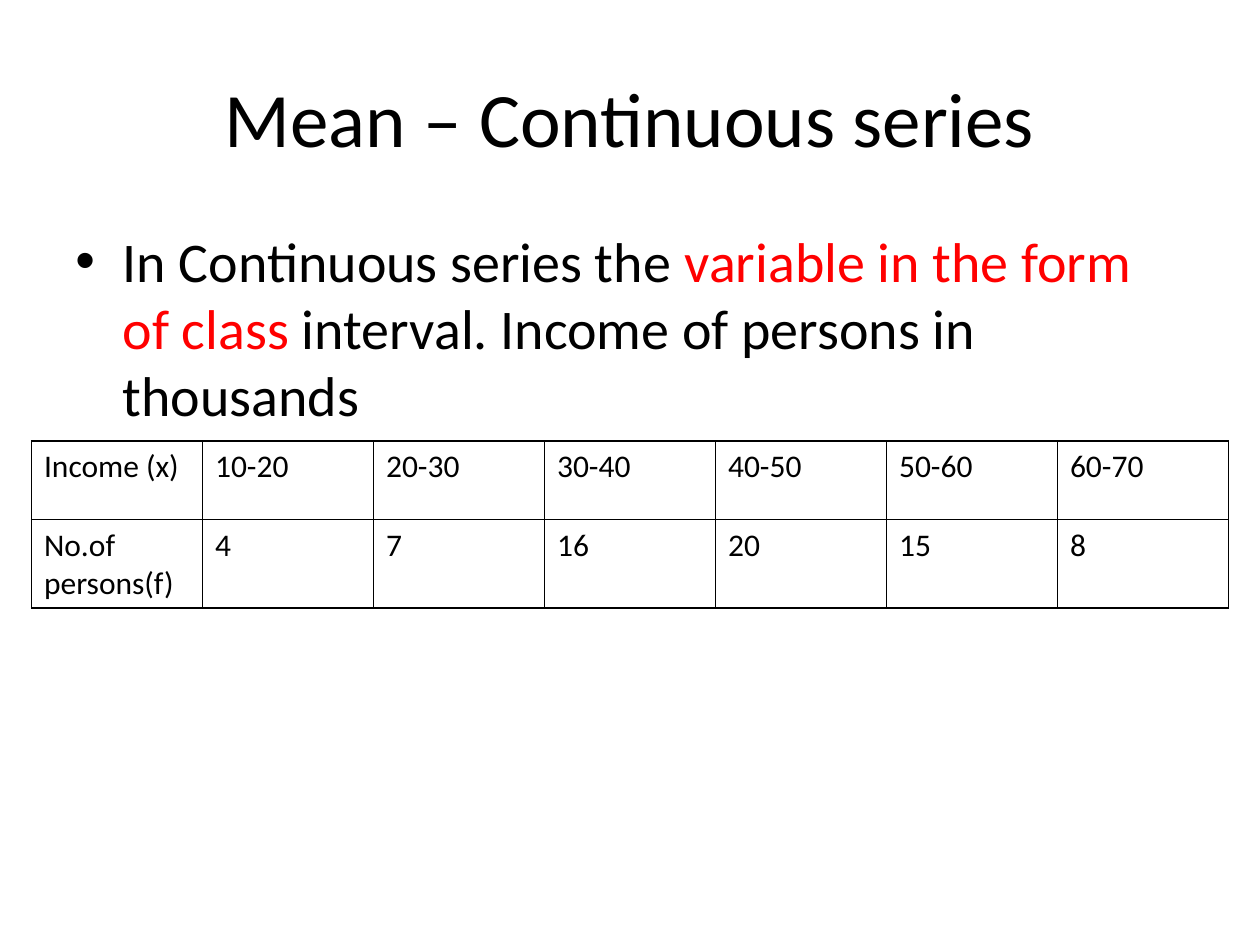
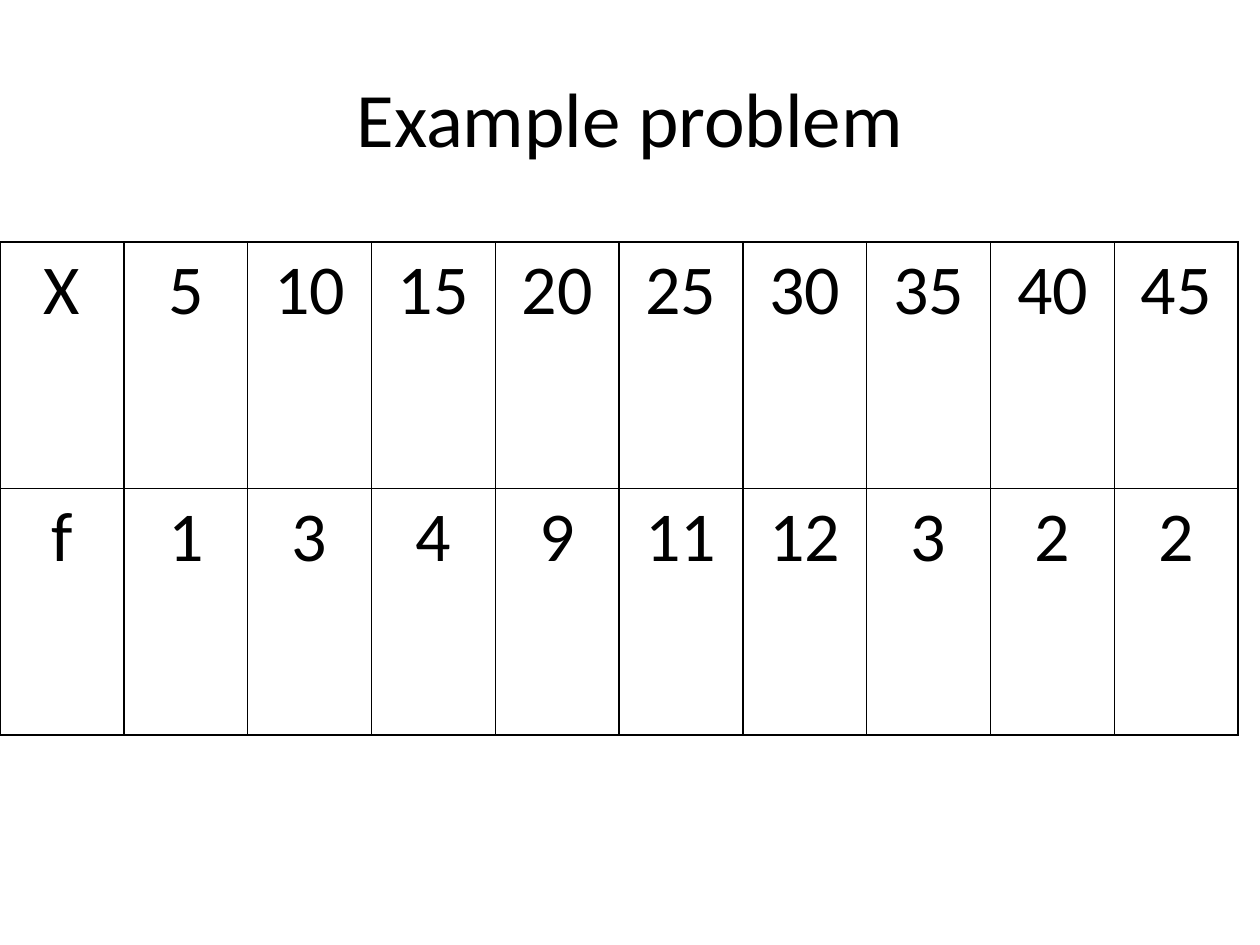
from lxml.etree import SubElement
from pptx import Presentation
from pptx.dml.color import RGBColor
from pptx.enum.text import MSO_ANCHOR as Anchor, PP_ALIGN as Align
from pptx.oxml.ns import qn
from pptx.util import Inches, Pt

WIDTH, HEIGHT = Inches(10), Inches(7.5)
MARGIN = 0.05
FONT, INK, ACCENT = "Calibri", "000000", "FF0000"
TITLE_SIZE, BODY_SIZE = 44, 32
BORDER_WIDTH = Pt(1)

INCOME = [
    ["Income (x)", "10-20", "20-30", "30-40", "40-50", "50-60", "60-70"],
    ["No.of persons(f)", "4", "7", "16", "20", "15", "8"],
]
FREQUENCY = [
    ["X", *(str(x) for x in range(5, 50, 5))],
    ["f", "1", "3", "4", "9", "11", "12", "3", "2", "2"],
]


def color(value):
    """Turn a hex string into a colour."""
    return RGBColor.from_string(value)


def across(share):
    """Return a share of the slide width."""
    return round(WIDTH * share)


def down(share):
    """Return a share of the slide height."""
    return round(HEIGHT * share)


def add_run(paragraph, text, size, ink=INK):
    """Add one run in the shared font."""
    run = paragraph.add_run()
    run.text = text
    run.font.name, run.font.size, run.font.bold = FONT, Pt(size), False
    run.font.color.rgb = color(ink)


def add_frame(slide, top, height, anchor):
    """Add a wrapping text frame between the side margins."""
    box = slide.shapes.add_textbox(across(MARGIN), down(top), across(1 - 2 * MARGIN), down(height))
    frame = box.text_frame
    frame.word_wrap = True
    frame.vertical_anchor = anchor
    return frame


def add_title(slide, text):
    """Add the centred slide title."""
    heading = add_frame(slide, 0.04, 1 / 6, Anchor.MIDDLE).paragraphs[0]
    heading.alignment = Align.CENTER
    add_run(heading, text, TITLE_SIZE)


def add_bullet(slide, pieces):
    """Add a bulleted paragraph made of (text, colour) pieces."""
    statement = add_frame(slide, 0.233, 0.66, Anchor.TOP).paragraphs[0]
    properties = statement._p.get_or_add_pPr()
    indent = Inches(0.375)
    properties.set("marL", str(indent))
    properties.set("indent", str(-indent))
    SubElement(properties, qn("a:buFont"), typeface="Arial")
    SubElement(properties, qn("a:buChar"), char="•")
    for text, ink in pieces:
        add_run(statement, text, BODY_SIZE, ink)


def add_borders(cell):
    """Draw a thin line on the four sides of a cell."""
    properties = cell._tc.get_or_add_tcPr()
    for side in ("lnL", "lnR", "lnT", "lnB"):
        line = SubElement(properties, qn(f"a:{side}"), w=str(BORDER_WIDTH))
        fill = SubElement(line, qn("a:solidFill"))
        SubElement(fill, qn("a:srgbClr"), val=INK)


def add_grid(slide, rows, left, top, width, row_height, size, align):
    """Add an unfilled, ruled table with equal columns and rows."""
    count = len(rows[0])
    grid = slide.shapes.add_table(
        len(rows), count, across(left), down(top),
        across(width), down(row_height * len(rows))).table
    grid.first_row = grid.horz_banding = False
    for column in grid.columns:
        column.width = across(width / count)
    for r, values in enumerate(rows):
        grid.rows[r].height = down(row_height)
        for c, value in enumerate(values):
            cell = grid.cell(r, c)
            add_borders(cell)
            cell.fill.background()
            entry = cell.text_frame.paragraphs[0]
            entry.alignment = align
            add_run(entry, value, size)


def add_slide(deck, title):
    """Add a blank slide with its title."""
    slide = deck.slides.add_slide(deck.slide_layouts[6])
    add_title(slide, title)
    return slide


def main():
    """Build both slides and save the deck."""
    deck = Presentation()
    deck.slide_width, deck.slide_height = WIDTH, HEIGHT

    series = add_slide(deck, "Mean – Continuous series")
    add_bullet(series, [
        ("In Continuous series the ", INK),
        ("variable in the form of class ", ACCENT),
        ("interval. Income of persons in thousands", INK),
    ])
    add_grid(series, INCOME, 0.025, 7 / 15, 0.95, 1 / 12, 18, Align.LEFT)

    example = add_slide(deck, "Example problem")
    add_grid(example, FREQUENCY, 0, 0.256, 0.983, 0.261, 40, Align.CENTER)

    deck.save("out.pptx")


if __name__ == "__main__":
    main()
